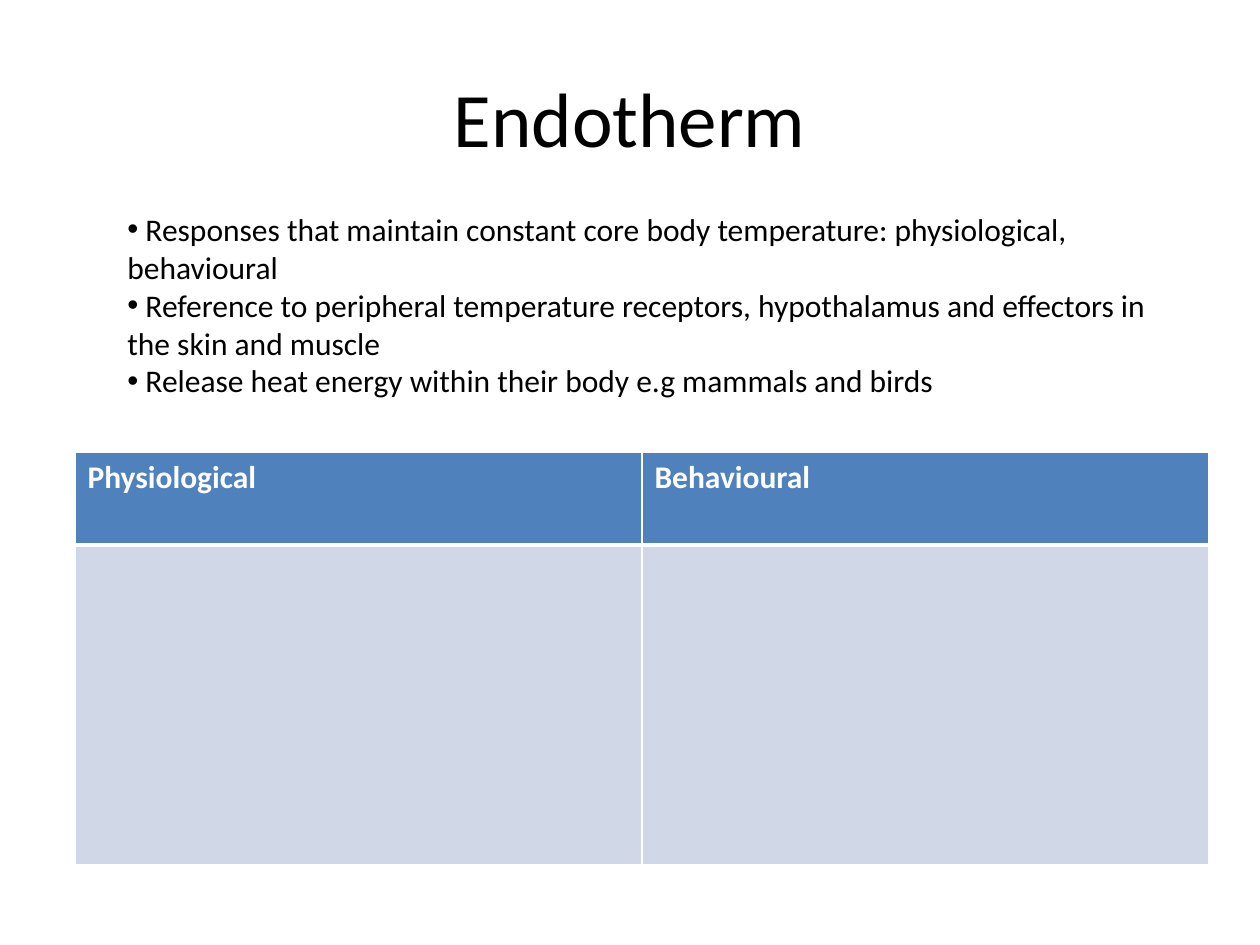
"""Build the Endotherm slide with its bullet points and response table."""
from dataclasses import dataclass

from lxml import etree
from pptx import Presentation
from pptx.dml.color import RGBColor
from pptx.enum.text import MSO_ANCHOR, PP_ALIGN
from pptx.oxml.ns import qn
from pptx.util import Emu, Pt

CENTER = PP_ALIGN.CENTER
MIDDLE = MSO_ANCHOR.MIDDLE
TITLE_ONLY = 5
PX = 914400 / 126
FONT = "Calibri"
COLORS = {"text": "000000", "white": "FFFFFF", "header": "4F81BD", "body": "D0D8E8"}
BULLETS = (
    " Responses that maintain constant core body temperature: physiological, behavioural",
    " Reference to peripheral temperature receptors, hypothalamus and effectors in the skin and muscle",
    " Release heat energy within their body e.g mammals and birds",
)


@dataclass(frozen=True)
class Box:
    left: int
    top: int
    width: int
    height: int

    def emu(self) -> tuple[Emu, ...]:
        return tuple(px(value) for value in (self.left, self.top, self.width, self.height))


@dataclass(frozen=True)
class Row:
    height: int
    fill: str
    texts: tuple[str, str]
    top_line: int
    bottom_line: int


TITLE_BOX = Box(63, 38, 1134, 157)
BULLET_BOX = Box(115, 204, 1052, 204)
TABLE_BOX = Box(75, 452, 1134, 413)
ROWS = (
    Row(93, "header", ("Physiological", "Behavioural"), 1, 3),
    Row(320, "body", ("", ""), 3, 1),
)


def px(value: int) -> Emu:
    return Emu(round(value * PX))


def format_font(font, size: int, color: str, bold: bool = False) -> None:
    font.name = FONT
    font.size = Pt(size)
    font.bold = bold
    font.color.rgb = RGBColor.from_string(COLORS[color])


def add_title(slide, text: str) -> None:
    title = slide.shapes.title
    title.left, title.top, title.width, title.height = TITLE_BOX.emu()
    title.text_frame.text = text
    title.text_frame.vertical_anchor = MIDDLE
    paragraph = title.text_frame.paragraphs[0]
    paragraph.alignment = CENTER
    format_font(paragraph.runs[0].font, 44, "text")


def add_bullets(slide) -> None:
    text_frame = slide.shapes.add_textbox(*BULLET_BOX.emu()).text_frame
    text_frame.word_wrap = True
    text_frame.text = "\n".join(BULLETS)
    for paragraph in text_frame.paragraphs:
        properties = paragraph._p.get_or_add_pPr()
        etree.SubElement(properties, qn("a:buFont"), typeface="Arial")
        etree.SubElement(properties, qn("a:buChar"), char="•")
        format_font(paragraph.runs[0].font, 18, "text")


def set_borders(cell, row: Row) -> None:
    properties = cell._tc.get_or_add_tcPr()
    widths = {"lnL": 1, "lnR": 1, "lnT": row.top_line, "lnB": row.bottom_line}
    for index, (side, width) in enumerate(widths.items()):
        line = etree.Element(qn(f"a:{side}"), w=str(Pt(width)))
        fill = etree.SubElement(line, qn("a:solidFill"))
        etree.SubElement(fill, qn("a:srgbClr"), val=COLORS["white"])
        properties.insert(index, line)


def add_response_table(slide) -> None:
    table = slide.shapes.add_table(len(ROWS), 2, *TABLE_BOX.emu()).table
    for row_index, row in enumerate(ROWS):
        table.rows[row_index].height = px(row.height)
        for column_index, text in enumerate(row.texts):
            cell = table.cell(row_index, column_index)
            cell.fill.solid()
            cell.fill.fore_color.rgb = RGBColor.from_string(COLORS[row.fill])
            set_borders(cell, row)
            cell.text_frame.text = text
            for run in cell.text_frame.paragraphs[0].runs:
                format_font(run.font, 18, "white", bold=True)


def main() -> None:
    presentation = Presentation()
    presentation.slide_width = px(1260)
    presentation.slide_height = px(945)
    slide = presentation.slides.add_slide(presentation.slide_layouts[TITLE_ONLY])
    add_title(slide, "Endotherm")
    add_response_table(slide)
    add_bullets(slide)
    presentation.save("out.pptx")


if __name__ == "__main__":
    main()
